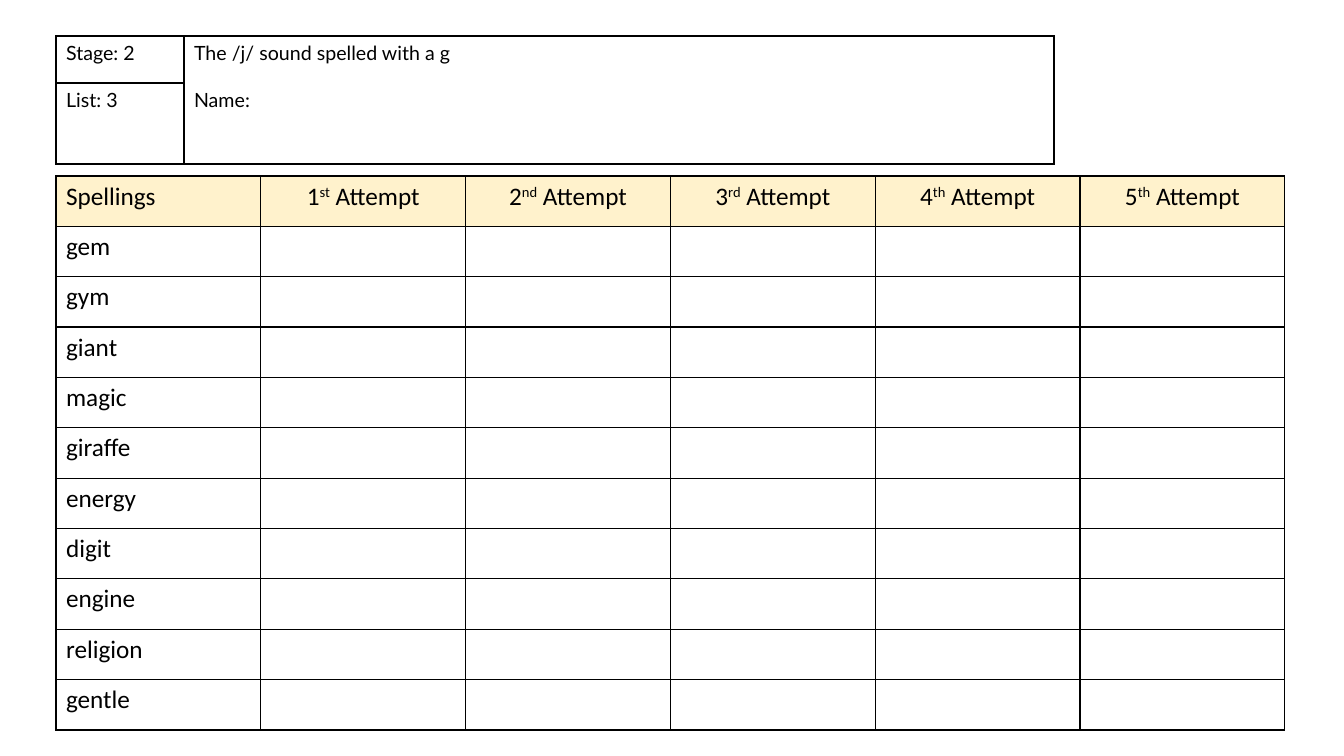
import pptx
import pptx.dml.color
import pptx.enum.text
import pptx.oxml
import pptx.oxml.ns
import pptx.util

# Content
LIST_LABELS = ["Stage: 2", "List: 3"]
LIST_DETAILS = ["The /j/ sound spelled with a g", "Name:"]
SPELLINGS = ["gem", "gym", "giant", "magic", "giraffe",
             "energy", "digit", "engine", "religion", "gentle"]
ORDINALS = ["st", "nd", "rd", "th", "th"]

# Look and layout, in px
COLOURS = {"ink": "000000", "paper": "FFFFFF", "header": "FFF2CC"}
SLIDE_SIZE = (1344, 756)
LEFT = 56
INFO_TOP, INFO_COLUMNS, INFO_ROWS = 36, [128, 870], [47, 81]
GRID_TOP, GRID_WIDTH, GRID_HEIGHT = 176, 1229, 554
EMU_PER_PX = 914400 / 100.8


def px(length):
    return pptx.util.Emu(round(length * EMU_PER_PX))


def rgb(name):
    return pptx.dml.color.RGBColor.from_string(COLOURS[name])


def add_borders(cell):
    properties = cell._tc.get_or_add_tcPr()
    for side in ("lnL", "lnR", "lnT", "lnB"):
        properties.append(pptx.oxml.parse_xml(
            f'<a:{side} {pptx.oxml.ns.nsdecls("a")} w="12700"><a:solidFill>'
            f'<a:srgbClr val="{COLOURS["ink"]}"/></a:solidFill></a:{side}>'))


def add_plain_table(slide, top, widths, heights):
    frame = slide.shapes.add_table(len(heights), len(widths), px(LEFT), px(top),
                                   px(sum(widths)), px(sum(heights)))
    table = frame.table
    table.first_row = table.horz_banding = False
    for column, width in zip(table.columns, widths):
        column.width = px(width)
    for row, height in zip(table.rows, heights):
        row.height = px(height)
    for cell in table.iter_cells():
        add_borders(cell)
        cell.fill.solid()
        cell.fill.fore_color.rgb = rgb("paper")
    return table


def add_run(paragraph, text, font_name, size, superscript=False):
    run = paragraph.add_run()
    run.text = text
    run.font.name = font_name
    run.font.size = pptx.util.Pt(size)
    run.font.color.rgb = rgb("ink")
    if superscript:
        run._r.get_or_add_rPr().set("baseline", "30000")


def add_spelling_grid(slide):
    row_count, column_count = len(SPELLINGS) + 1, len(ORDINALS) + 1
    table = add_plain_table(slide, GRID_TOP,
                            [GRID_WIDTH / column_count] * column_count,
                            [GRID_HEIGHT / row_count] * row_count)
    for row, word in enumerate(["Spellings"] + SPELLINGS):
        add_run(table.cell(row, 0).text_frame.paragraphs[0], word, "Calibri", 18)
    for number, ordinal in enumerate(ORDINALS, start=1):
        paragraph = table.cell(0, number).text_frame.paragraphs[0]
        paragraph.alignment = pptx.enum.text.PP_ALIGN.CENTER
        add_run(paragraph, str(number), "Calibri", 18)
        add_run(paragraph, ordinal, "Calibri", 18, superscript=True)
        add_run(paragraph, " Attempt", "Calibri", 18)
    for column in range(column_count):
        table.cell(0, column).fill.fore_color.rgb = rgb("header")


def add_list_info(slide):
    table = add_plain_table(slide, INFO_TOP, INFO_COLUMNS, INFO_ROWS)
    for row, label in enumerate(LIST_LABELS):
        add_run(table.cell(row, 0).text_frame.paragraphs[0], label, "Lato", 14)
    details = table.cell(0, 1)
    details.merge(table.cell(1, 1))
    title, name = details.text_frame.paragraphs[0], details.text_frame.add_paragraph()
    name.space_before = pptx.util.Pt(17)
    for paragraph, text in zip((title, name), LIST_DETAILS):
        add_run(paragraph, text, "Lato", 14)


def main():
    presentation = pptx.Presentation()
    presentation.slide_width, presentation.slide_height = map(px, SLIDE_SIZE)
    slide = presentation.slides.add_slide(presentation.slide_layouts[6])
    add_spelling_grid(slide)
    add_list_info(slide)
    presentation.save("out.pptx")


if __name__ == "__main__":
    main()
